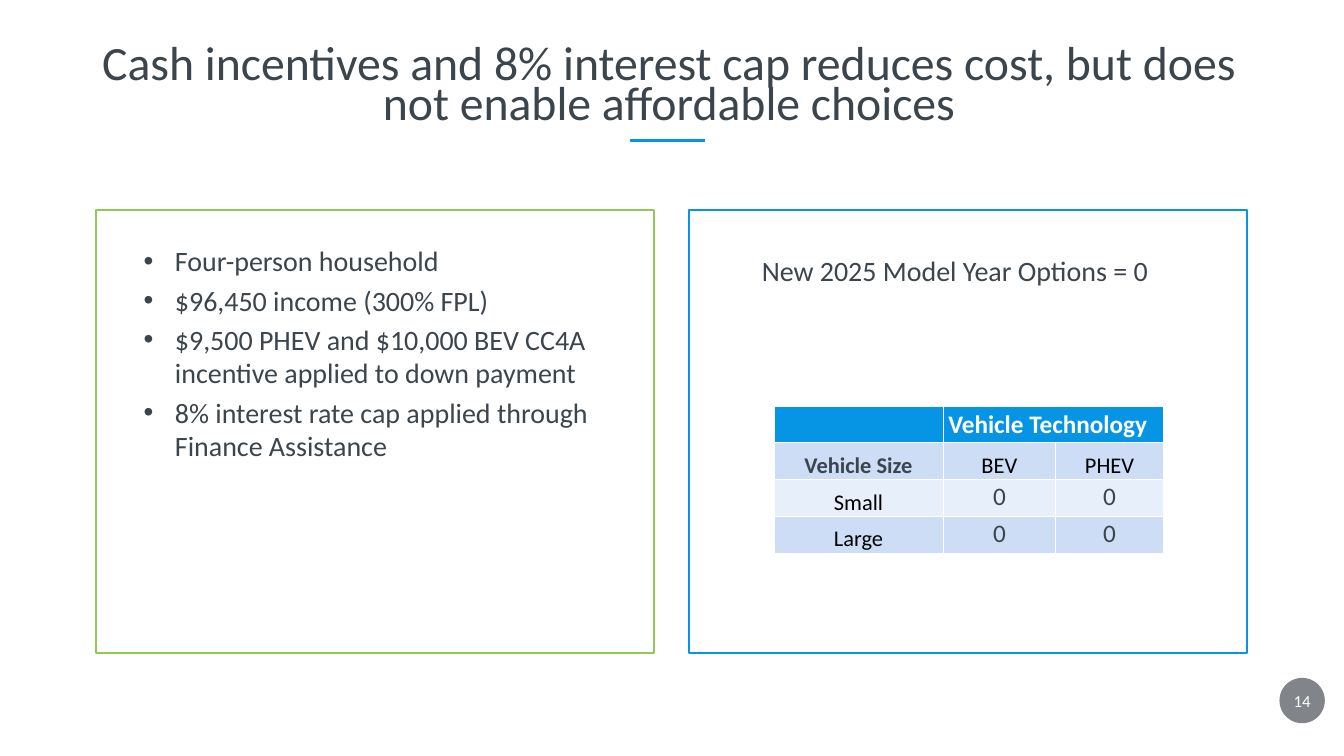
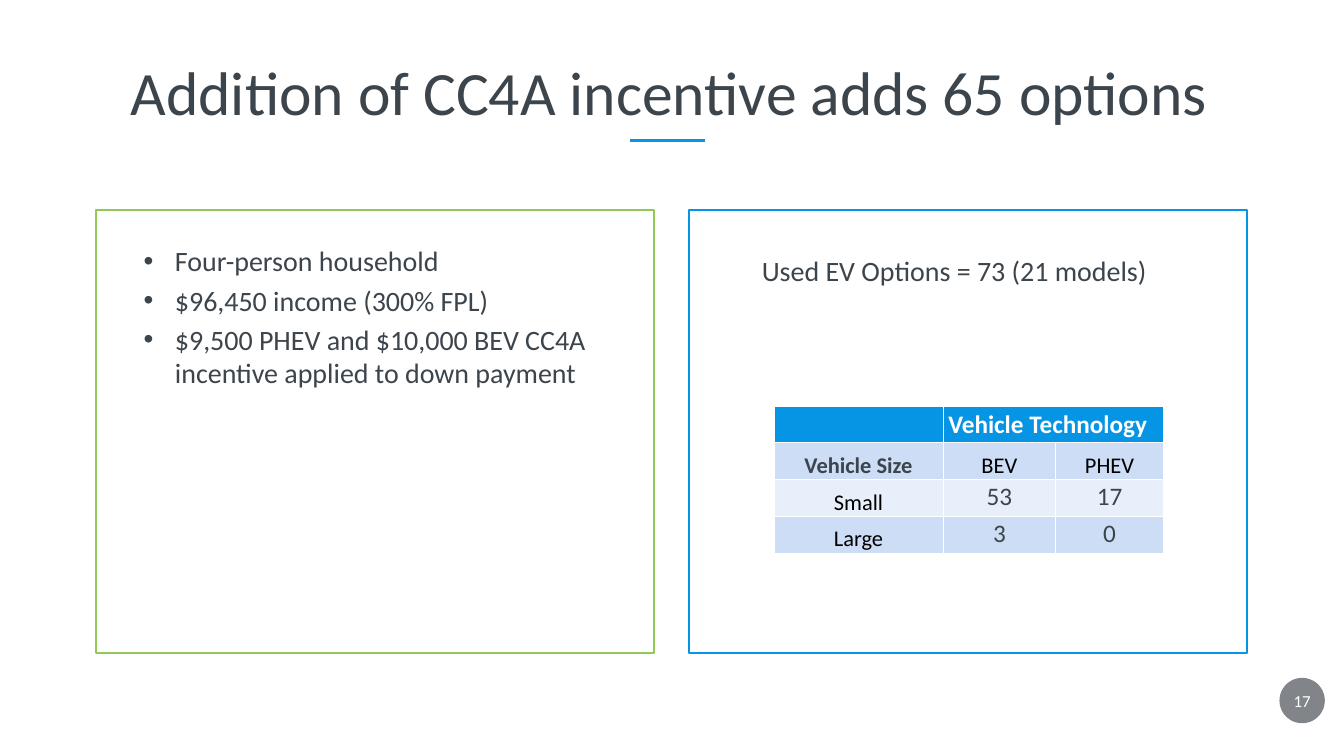
from lxml import etree
from pptx import Presentation
from pptx.dml.color import RGBColor
from pptx.enum.shapes import MSO_CONNECTOR, MSO_SHAPE
from pptx.enum.text import MSO_ANCHOR, MSO_AUTO_SIZE, PP_ALIGN
from pptx.oxml.ns import qn
from pptx.util import Inches, Pt

FONT = "Calibri"
INK = RGBColor(0x3C, 0x44, 0x4C)
DARK = RGBColor(0x2D, 0x33, 0x39)
BLUE = RGBColor(0x06, 0x95, 0xE5)
GREEN = RGBColor(0x92, 0xC9, 0x56)
BAND = RGBColor(0xCC, 0xDD, 0xF5)
PALE = RGBColor(0xE7, 0xEF, 0xFA)
WHITE = RGBColor(0xFF, 0xFF, 0xFF)
BLACK = RGBColor(0, 0, 0)

LEFT, CENTER = PP_ALIGN.LEFT, PP_ALIGN.CENTER
TOP, MIDDLE, BOTTOM = MSO_ANCHOR.TOP, MSO_ANCHOR.MIDDLE, MSO_ANCHOR.BOTTOM
NO_FIT = MSO_AUTO_SIZE.NONE
RECT, OVAL = MSO_SHAPE.RECTANGLE, MSO_SHAPE.OVAL
STRAIGHT = MSO_CONNECTOR.STRAIGHT

TITLE_ONLY = 5
PANEL_LEFTS = {GREEN: 1.9, BLUE: 13.67}
COL_WIDTHS = [3.36, 2.23, 2.14]
ROW_HEIGHTS = [0.71, 0.73, 0.73, 0.73]
ROW_FILLS = [BLUE, BAND, PALE, BAND]

HOUSEHOLD = [
    "Four-person household",
    "$96,450 income (300% FPL)",
    "$9,500 PHEV and $10,000 BEV CC4A incentive applied to down payment",
]


def add_run(p, text, size, color=INK, bold=False):
    r = p.add_run()
    r.text = text
    r.font.name = FONT
    r.font.size = Pt(size)
    r.font.bold = bold
    r.font.color.rgb = color


def add_title(slide, text, size, spacing):
    sp = slide.shapes.title
    sp.left, sp.top = Inches(1.5), Inches(0.82)
    sp.width, sp.height = Inches(23.54), Inches(1.79)
    tf = sp.text_frame
    tf.auto_size = NO_FIT
    tf.word_wrap = True
    tf.vertical_anchor = BOTTOM
    p = tf.paragraphs[0]
    p.alignment = CENTER
    p.line_spacing = spacing
    add_run(p, text, size)


def add_rule(slide):
    line = slide.shapes.add_connector(
        STRAIGHT, Inches(12.5), Inches(2.79), Inches(13.99), Inches(2.79))
    line.line.color.rgb = BLUE
    line.line.width = Pt(3.6)
    etree.SubElement(line._element.spPr, qn("a:effectLst"))


def add_panel(slide, color):
    sp = slide.shapes.add_shape(
        RECT, Inches(PANEL_LEFTS[color]), Inches(4.17), Inches(11.07), Inches(8.78))
    sp.shadow.inherit = False
    sp.fill.background()
    sp.line.color.rgb = color
    sp.line.width = Pt(3)


def add_text_box(slide, left, top, width, height, inset=(0.24, 0.12)):
    box = slide.shapes.add_textbox(
        Inches(left), Inches(top), Inches(width), Inches(height))
    tf = box.text_frame
    tf.word_wrap = True
    tf.margin_left = tf.margin_right = Inches(inset[0])
    tf.margin_top = tf.margin_bottom = Inches(inset[1])
    return tf


def add_page_number(slide, number):
    sp = slide.shapes.add_shape(
        OVAL, Inches(25.38), Inches(13.45), Inches(0.9), Inches(0.9))
    sp.shadow.inherit = False
    sp.fill.solid()
    sp.fill.fore_color.rgb = DARK
    clr = sp._element.spPr.find(qn("a:solidFill"))[0]
    etree.SubElement(clr, qn("a:alpha"), val="60000")
    sp.line.fill.background()
    tf = add_text_box(slide, 25.38, 13.5, 0.9, 0.8, (0.1, 0.05))
    tf.vertical_anchor = MIDDLE
    p = tf.paragraphs[0]
    p.alignment = CENTER
    add_run(p, str(number), 24, WHITE)


def add_bullets(slide, items):
    tf = add_text_box(slide, 2.61, 4.72, 9.64, 5.49)
    for i, item in enumerate(items):
        p = tf.paragraphs[0] if i == 0 else tf.add_paragraph()
        pPr = p._p.get_or_add_pPr()
        pPr.set("marL", str(Inches(0.62)))
        pPr.set("indent", str(-Inches(0.62)))
        etree.SubElement(pPr, qn("a:buFont"), typeface="Arial")
        etree.SubElement(pPr, qn("a:buChar"), char="•")
        if i:
            p.space_before = Pt(8)
        add_run(p, item, 40)


def set_borders(cell, row):
    tcPr = cell._tc.get_or_add_tcPr()
    for side in ("L", "R", "T", "B"):
        thick = (row, side) in ((0, "B"), (1, "T"))
        ln = etree.SubElement(tcPr, qn("a:ln" + side), w=str(Pt(3 if thick else 1)))
        fill = etree.SubElement(ln, qn("a:solidFill"))
        etree.SubElement(fill, qn("a:srgbClr"), val=str(WHITE))


def set_cell_text(cell, text, size, color, bold=False, align=CENTER, anchor=TOP):
    cell.vertical_anchor = anchor
    if anchor == BOTTOM:
        cell.margin_left = cell.margin_right = cell.margin_top = Inches(0.01)
        cell.margin_bottom = 0
    p = cell.text_frame.paragraphs[0]
    p.alignment = align
    add_run(p, text, size, color, bold)


def add_options_table(slide, counts):
    table = slide.shapes.add_table(
        4, 3, Inches(15.35), Inches(8.07),
        Inches(sum(COL_WIDTHS)), Inches(sum(ROW_HEIGHTS))).table
    for col, width in zip(table.columns, COL_WIDTHS):
        col.width = Inches(width)
    for i, (height, color) in enumerate(zip(ROW_HEIGHTS, ROW_FILLS)):
        table.rows[i].height = Inches(height)
        for cell in table.rows[i].cells:
            set_borders(cell, i)
            cell.fill.solid()
            cell.fill.fore_color.rgb = color
    table.cell(0, 1).merge(table.cell(0, 2))
    set_cell_text(table.cell(0, 1), "Vehicle Technology", 36, WHITE, True, LEFT)
    set_cell_text(table.cell(1, 0), "Vehicle Size", 32, INK, True, anchor=BOTTOM)
    for j, tech in enumerate(("BEV", "PHEV"), 1):
        set_cell_text(table.cell(1, j), tech, 32, BLACK, anchor=BOTTOM)
    for i, (size_name, row) in enumerate(zip(("Small", "Large"), counts), 2):
        set_cell_text(table.cell(i, 0), size_name, 32, BLACK, anchor=BOTTOM)
        for j, count in enumerate(row, 1):
            set_cell_text(table.cell(i, j), str(count), 36, INK)


def add_scenario(prs, number, title, size, spacing, bullets, options, counts):
    slide = prs.slides.add_slide(prs.slide_layouts[TITLE_ONLY])
    add_rule(slide)
    add_title(slide, title, size, spacing)
    for color in PANEL_LEFTS:
        add_panel(slide, color)
    add_bullets(slide, bullets)
    tf = add_text_box(slide, 14.87, 4.91, 9.91, 0.91)
    add_run(tf.paragraphs[0], options, 40)
    add_options_table(slide, counts)
    add_page_number(slide, number)


def main():
    prs = Presentation()
    prs.slide_width, prs.slide_height = Inches(26.66), Inches(15)
    add_scenario(
        prs, 14,
        "Cash incentives and 8% interest cap reduces cost, "
        "but does not enable affordable choices", 68.2, 0.7,
        HOUSEHOLD + ["8% interest rate cap applied through Finance Assistance"],
        "New 2025 Model Year Options = 0", [(0, 0), (0, 0)])
    add_scenario(
        prs, 17, "Addition of CC4A incentive adds 65 options", 88, 0.9,
        HOUSEHOLD, "Used EV Options = 73 (21 models)", [(53, 17), (3, 0)])
    prs.save("out.pptx")


if __name__ == "__main__":
    main()
